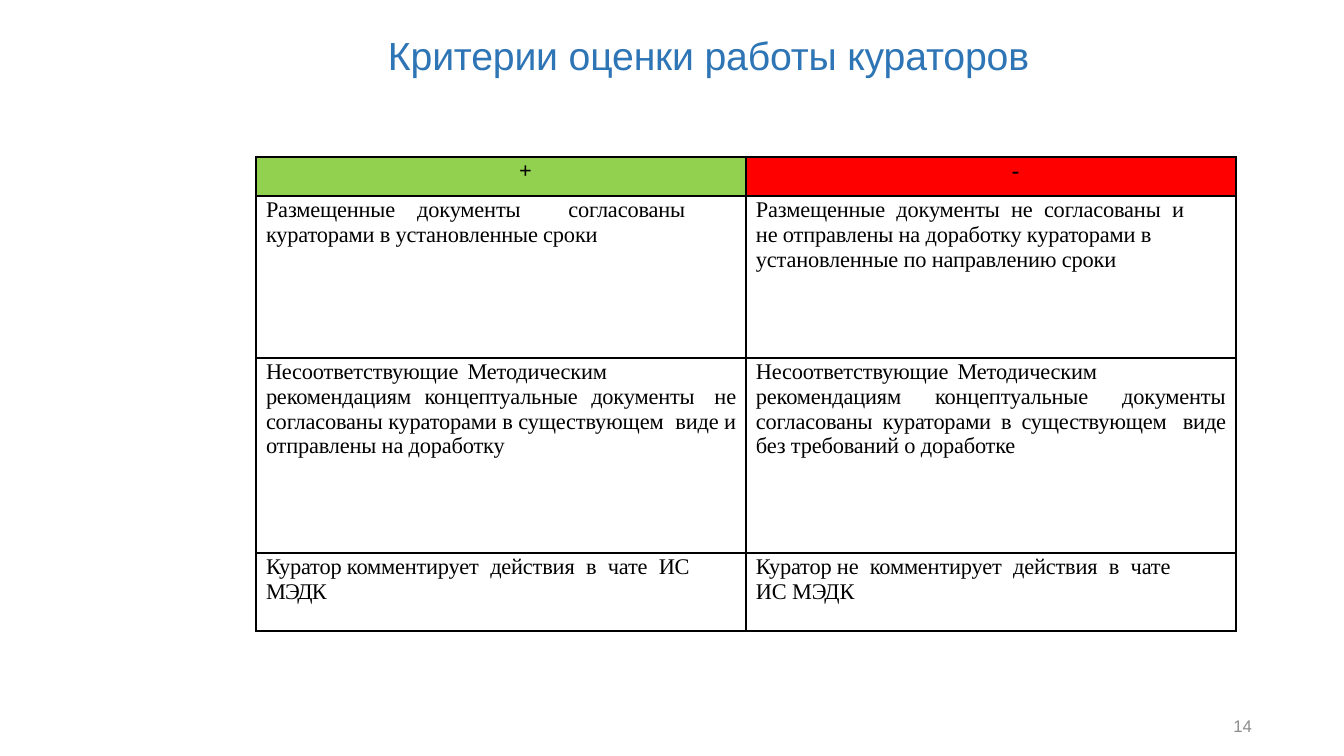
from pptx import Presentation
from pptx.dml.color import RGBColor as RGB
from pptx.enum.text import PP_ALIGN as Align, MSO_ANCHOR as Anchor, MSO_AUTO_SIZE as Auto
from pptx.oxml.ns import qn
from pptx.util import Pt
from lxml.etree import SubElement as Sub

PX = 914400 / 100.8
BLACK = RGB(0, 0, 0)
WHITE = RGB(255, 255, 255)
GREEN = RGB(0x92, 0xD0, 0x50)
RED = RGB(255, 0, 0)
BLUE = RGB(0x2E, 0x75, 0xB6)
GRAY = RGB(0x8C, 0x8C, 0x8C)
GAP = "_"


def px(*sizes):
    return [round(size * PX) for size in sizes]


def write(para, text, face, size, color, bold=False, tabs=(), space=-10):
    if tabs:
        stops = Sub(para._p.get_or_add_pPr(), qn("a:tabLst"))
        for stop in px(*tabs):
            Sub(stops, qn("a:tab"), pos=str(stop), algn="l")
    parts = text.split(GAP)
    for num, part in enumerate(parts):
        if num:
            gap = para.add_run()
            gap.text = " "
            gap._r.get_or_add_rPr().set("spc", "400")
        run = para.add_run()
        run.text = part
        run._r.get_or_add_rPr().set("spc", str(space))
    font = para.font
    font.name, font.size, font.bold = face, Pt(size), bold
    font.color.rgb = color


deck = Presentation()
deck.slide_width, deck.slide_height = px(1344, 756)
slide = deck.slides.add_slide(deck.slide_layouts[5])

title = slide.shapes.title
title.left, title.top, title.width, title.height = px(388, 31, 715, 48)
frame = title.text_frame
frame.margin_left = frame.margin_right = frame.margin_top = frame.margin_bottom = 0
frame.vertical_anchor = Anchor.MIDDLE
frame.auto_size = Auto.NONE
frame.paragraphs[0].alignment = Align.LEFT
write(frame.paragraphs[0], "Критерии оценки работы кураторов", "Arial", 28, BLUE)

rows = [
    [["+"], ["-"]],
    [["Размещенные\tдокументы\tсогласованы", "кураторами в установленные сроки"],
     ["Размещенные_документы_не_согласованы_и",
      "не отправлены на доработку кураторами в установленные по направлению сроки"]],
    [["Несоответствующие\tМетодическим",
      "рекомендациям концептуальные документы_не согласованы кураторами "
      "в существующем_виде и отправлены на доработку"],
     ["Несоответствующие\tМетодическим",
      "рекомендациям концептуальные документы_согласованы кураторами "
      "в существующем_виде без требований о доработке"]],
    [["Куратор комментирует_действия_в_чате_ИС", "МЭДК"],
     ["Куратор не_комментирует_действия_в_чате", "ИС МЭДК"]],
]
fills = [GREEN, RED]
tabs = {1: (180, 324), 2: (300,)}
high = [39, 162, 195, 78]
wide = 490

table = slide.shapes.add_table(4, 2, *px(256, 157, 2 * wide, sum(high))).table
table.first_row = table.horz_banding = False
for col in table.columns:
    col.width = px(wide)[0]
for y, row in enumerate(rows):
    table.rows[y].height = px(high[y])[0]
    for x, lines in enumerate(row):
        cell = table.cell(y, x)
        cell.margin_left = cell.margin_right = cell.margin_top = cell.margin_bottom = 0
        props = cell._tc.get_or_add_tcPr()
        for side in ("lnL", "lnR", "lnT", "lnB"):
            line = Sub(props, qn("a:" + side), w="12700")
            Sub(Sub(line, qn("a:solidFill")), qn("a:srgbClr"), val=str(BLACK))
        cell.fill.solid()
        cell.fill.fore_color.rgb = WHITE if y else fills[x]
        for num, text in enumerate(lines):
            frame = cell.text_frame
            para = frame.add_paragraph() if num else frame.paragraphs[0]
            look = para._p.get_or_add_pPr()
            look.set("marL", str(px(10 if y else 49)[0]))
            look.set("marR", str(px(10 if y == 2 else 0)[0]))
            look.set("indent", "0")
            para.alignment = [Align.CENTER, Align.LEFT, Align.JUSTIFY, Align.LEFT][y]
            if num == 0:
                para.line_spacing = Pt(18.7)
            write(para, text, "Times New Roman", 16, BLACK, y == 0,
                  () if num or "\t" not in text else tabs[y],
                  -50 if text == "МЭДК" else -10)

page = slide.shapes.add_textbox(*px(950, 701, 302, 40)).text_frame
page.margin_left = page.margin_right = page.margin_top = page.margin_bottom = 0
page.word_wrap = True
page.vertical_anchor = Anchor.MIDDLE
page.paragraphs[0].alignment = Align.RIGHT
page.paragraphs[0].line_spacing = Pt(21.9)
write(page.paragraphs[0], "14", "Arial", 12, GRAY)

deck.save("out.pptx")
